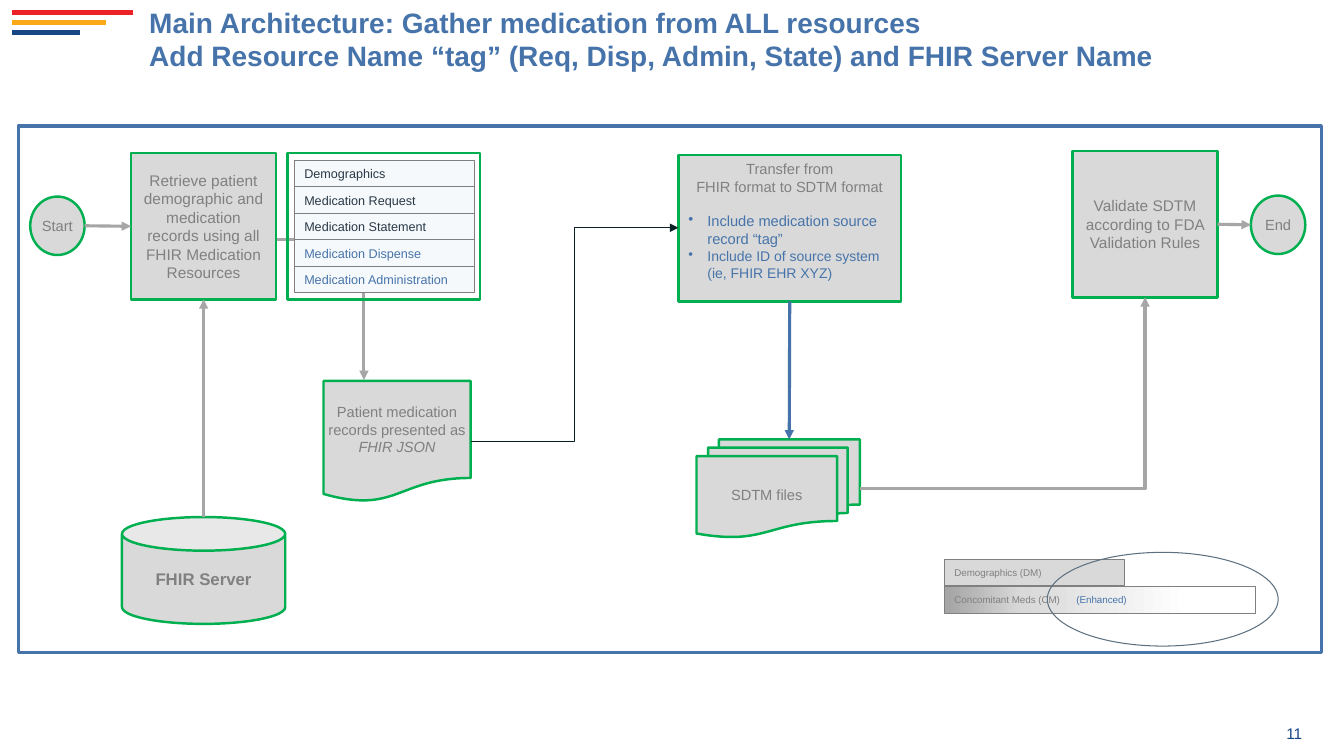
from copy import deepcopy

from lxml.etree import SubElement
from pptx import Presentation
from pptx.dml.color import RGBColor
from pptx.enum.shapes import MSO_CONNECTOR, MSO_SHAPE
from pptx.enum.text import MSO_ANCHOR, PP_ALIGN
from pptx.oxml.ns import qn
from pptx.util import Inches, Pt

COLUMNS, ROWS = 80, 45
CELL = Inches(7.5) / ROWS
GREEN, GRAY, SILVER, ARROW = "00B050", "808080", "D9D9D9", "A6A6A6"
BLUE, NAVY, INK = "4674AA", "184786", "293947"
STEP = 8.7
ROW = 1.58


def color(value):
    """Turn a hex string into a colour."""
    return RGBColor.from_string(value)


def cells(*values):
    """Turn grid cells into slide lengths."""
    return [round(value * CELL) for value in values]


def inside(box, left, top, width=0, height=0):
    """Give a box placed relative to the corner of another one."""
    return box[0] + left, box[1] + top, width, height


def add_box(page, kind, box, fill=SILVER, line=GREEN, weight=1.75, inset=0.1):
    """Draw a preset shape ready for text."""
    shape = page.shapes.add_shape(kind, *cells(*box))
    shape.shadow.inherit = False
    if fill:
        shape.fill.solid()
        shape.fill.fore_color.rgb = color(fill)
    else:
        shape.fill.background()
    shape.line.color.rgb = color(line)
    shape.line.width = Pt(weight)
    frame = shape.text_frame
    frame.word_wrap = True
    frame.vertical_anchor = MSO_ANCHOR.MIDDLE
    frame.margin_left = frame.margin_right = Inches(inset)
    return shape


def add_span(para, text, size, tint=GRAY, bold=False, italic=False):
    """Add one run to a paragraph."""
    span = para.add_run()
    span.text = text
    span.font.name = "Arial"
    span.font.size = Pt(size)
    span.font.bold = bold
    span.font.italic = italic
    span.font.color.rgb = color(tint)


def add_para(shape, text, size, tint=GRAY, align=PP_ALIGN.CENTER, **style):
    """Add a paragraph with one run, filling the empty first one."""
    frame = shape.text_frame
    para = frame.paragraphs[0] if not frame.text else frame.add_paragraph()
    para.alignment = align
    add_span(para, text, size, tint, **style)
    return para


def add_bullet(shape, text, size, gap=0):
    """Add a blue bulleted paragraph."""
    para = add_para(shape, text, size, BLUE, PP_ALIGN.LEFT)
    para.space_before = Pt(gap)
    properties = para._p.get_or_add_pPr()
    properties.set("marL", str(Inches(0.19)))
    properties.set("indent", str(-Inches(0.19)))
    SubElement(properties, qn("a:buChar"), char="•")


def add_line(page, start, end, tint=ARROW, weight=2.25, head=True,
             kind=MSO_CONNECTOR.STRAIGHT, corner=False):
    """Draw a connector, straight or bent, with an optional arrowhead."""
    link = page.shapes.add_connector(kind, *cells(*start[:2], *end[:2]))
    link.line.color.rgb = color(tint)
    link.line.width = Pt(weight)
    if head:
        SubElement(link.line._get_or_add_ln(), qn("a:tailEnd"), type="triangle")
    properties = link._element.spPr
    SubElement(properties, qn("a:effectLst"))
    if corner:
        properties.find(qn("a:prstGeom")).set("prst", "bentConnector2")
    return link


def add_text_box(page, box):
    """Add a wrapping text box without margins."""
    shape = page.shapes.add_textbox(*cells(*box))
    frame = shape.text_frame
    frame.word_wrap = True
    frame.margin_left = frame.margin_right = 0
    frame.margin_top = frame.margin_bottom = 0
    return shape


def draw_header(page, box):
    """Draw the three colour bars and the title."""
    bars = [(7.2, "EC2227"), (5.58, "FBA919"), (4.02, NAVY)]
    for index, (length, tint) in enumerate(bars):
        top = 0.72 + 0.6 * index
        add_line(page, inside(box, 0.72, top), inside(box, 0.72 + length, top),
                 tint, 3.5, head=False)
    title = add_text_box(page, inside(box, 8.88, 0.3, 66.3, 3.18))
    for text in ("Main Architecture: Gather medication from ALL resources",
                 "Add Resource Name “tag” (Req, Disp, Admin, State) and FHIR Server Name"):
        add_para(title, text, 20, BLUE, PP_ALIGN.LEFT, bold=True)


def draw_resources(page, box):
    """Draw the framed list of resources."""
    resources = [("Demographics", INK), ("Medication Request", INK),
                 ("Medication Statement", INK), ("Medication Dispense", BLUE),
                 ("Medication Administration", BLUE)]
    for index, (name, tint) in enumerate(resources):
        place = inside(box, 0.42, 0.42 + ROW * index, 10.74, ROW)
        row = add_box(page, MSO_SHAPE.RECTANGLE, place, "F6F9FB", GRAY, 0.75)
        add_para(row, name, 9, tint, PP_ALIGN.LEFT)
    add_box(page, MSO_SHAPE.RECTANGLE, box, fill=None)


def draw_gathering(page, box):
    """Draw the steps from the start and the server to the patient records."""
    add_line(page, inside(box, 12.72, 5.16), inside(box, 19.86, 13.5),
             kind=MSO_CONNECTOR.ELBOW, corner=True)
    server = add_box(page, MSO_SHAPE.CAN, inside(box, 5.46, 21.66, 9.72, 6.36))
    server.adjustments[0] = 0.315
    add_para(server, "FHIR Server", 12, bold=True)
    retrieve = add_box(page, MSO_SHAPE.RECTANGLE, inside(box, 6, 0, 8.64, STEP))
    add_para(retrieve, "Retrieve patient demographic and medication records "
             "using all FHIR Medication Resources", 11)
    start = add_box(page, MSO_SHAPE.OVAL, inside(box, 0, 2.58, 3.24, 3.48), inset=0)
    add_para(start, "Start", 10.5)
    records = add_box(page, MSO_SHAPE.FLOWCHART_DOCUMENT,
                      inside(box, 17.46, 13.56, 8.76, 7.2), inset=0)
    add_para(records, "Patient medication records presented as", 10.5)
    add_para(records, "FHIR JSON", 10.5, italic=True)
    from_server = add_line(page, inside(box, 10.32, 21.66), inside(box, 10.32, STEP))
    from_server.end_connect(retrieve, 2)
    from_start = add_line(page, inside(box, 3.24, 4.32), inside(box, 6, 4.35))
    from_start.end_connect(retrieve, 1)
    draw_resources(page, inside(box, 15.3, 0, 11.46, STEP))


def draw_transfer(page, box):
    """Draw the conversion step and the files it makes."""
    transfer = add_box(page, MSO_SHAPE.RECTANGLE, inside(box, 0, 0, 13.26, STEP))
    transfer.text_frame.vertical_anchor = MSO_ANCHOR.TOP
    add_para(transfer, "Transfer from", 10.5)
    add_para(transfer, "FHIR format to SDTM format", 10.5)
    add_bullet(transfer, "Include medication source record “tag”", 10.5, gap=12)
    add_bullet(transfer, "Include ID of source system (ie, FHIR EHR XYZ)", 10)
    files = add_box(page, MSO_SHAPE.FLOWCHART_MULTIDOCUMENT,
                    inside(box, 1.08, 16.92, 9.72, 5.82))
    add_para(files, "SDTM files", 10.5)
    link = add_line(page, inside(box, 6.63, STEP), inside(box, 6.6, 16.92), BLUE)
    link.begin_connect(transfer, 2)


def draw_validation(page, box):
    """Draw the validation step and the end."""
    validate = add_box(page, MSO_SHAPE.RECTANGLE, inside(box, 0, 0, 8.64, STEP))
    add_para(validate, "Validate SDTM according to FDA Validation Rules", 11)
    end = add_box(page, MSO_SHAPE.OVAL, inside(box, 10.62, 2.64, 3.24, 3.48), inset=0)
    add_para(end, "End", 10.5)
    link = add_line(page, inside(box, 8.64, 4.35), inside(box, 10.62, 4.38))
    link.begin_connect(validate, 3)


def draw_domains(page, box):
    """Draw the two data domains and the ellipse around the enhanced one."""
    meds = add_box(page, MSO_SHAPE.RECTANGLE, inside(box, 0, 2.04, 18.54, ROW),
                   line=GRAY, weight=0.75)
    meds.fill.gradient()
    meds.fill.gradient_angle = 0
    stops = meds._element.spPr.find(".//" + qn("a:gsLst"))
    stops.append(deepcopy(stops[0]))
    shades = [(0.01, ARROW), (0.25, SILVER), (0.78, "FFFFFF")]
    for stop, (position, tint) in zip(meds.fill.gradient_stops, shades):
        stop.position = position
        stop.color.rgb = color(tint)
    para = add_para(meds, "Concomitant Meds (CM)\t", 7, align=PP_ALIGN.LEFT)
    tabs = SubElement(para._p.get_or_add_pPr(), qn("a:tabLst"))
    SubElement(tabs, qn("a:tab"), pos=str(Inches(1.21)), algn="l")
    add_span(para, "(Enhanced)", 7, BLUE)
    people = add_box(page, MSO_SHAPE.RECTANGLE, inside(box, 0, 0.42, 10.74, ROW),
                     line=GRAY, weight=0.75)
    add_para(people, "Demographics (DM)", 7, align=PP_ALIGN.LEFT)
    add_box(page, MSO_SHAPE.OVAL, inside(box, 6.12, 0, 13.74, 5.58), None, "5D707F", 0.75)


def draw_flow(page, box):
    """Draw the framed flow and the links between its regions."""
    add_box(page, MSO_SHAPE.RECTANGLE, box, None, BLUE, 2.25)
    draw_gathering(page, inside(box, 0.72, 1.62))
    draw_transfer(page, inside(box, 39.3, 1.74))
    draw_validation(page, inside(box, 62.76, 1.5))
    draw_domains(page, inside(box, 55.14, 25.38))
    add_line(page, inside(box, 26.94, 18.78), inside(box, 39.3, 6.06), "0C2126", 0.5,
             kind=MSO_CONNECTOR.ELBOW)
    add_line(page, inside(box, 50.1, 21.6), inside(box, 67.08, 10.2),
             kind=MSO_CONNECTOR.ELBOW, corner=True)


def draw_footer(page, box):
    """Write the page number."""
    number = add_text_box(page, box)
    number.text_frame.vertical_anchor = MSO_ANCHOR.MIDDLE
    add_para(number, "11", 11, NAVY, PP_ALIGN.RIGHT)


def main():
    """Build the slide and save it."""
    deck = Presentation()
    deck.slide_width, deck.slide_height = cells(COLUMNS, ROWS)
    page = deck.slides.add_slide(deck.slide_layouts[6])
    draw_header(page, (0, 0, COLUMNS, 4))
    draw_flow(page, (1.08, 7.5, 77.58, 31.32))
    draw_footer(page, (71.88, 42.96, 5.64, 1.38))
    deck.save("out.pptx")


if __name__ == "__main__":
    main()
